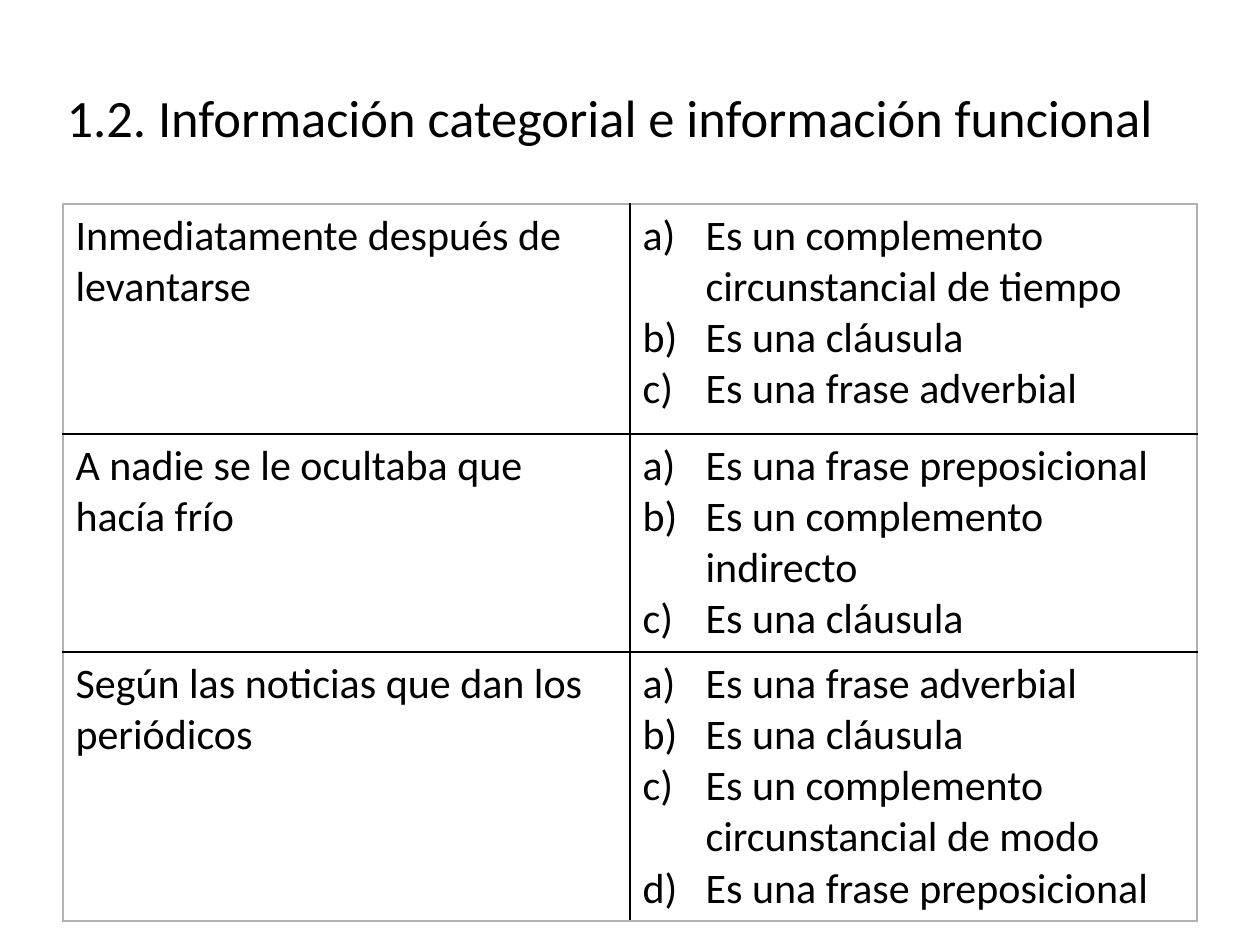
from pptx import Presentation
from pptx import util as u
from pptx.dml.color import RGBColor
from pptx.enum import text
from pptx.oxml.ns import qn
from lxml import etree

# Content: each phrase with its possible analyses
TITLE = "1.2. Información categorial e información funcional"
ROWS = [
    ("Inmediatamente después de levantarse",
     ["Es un complemento circunstancial de tiempo",
      "Es una cláusula",
      "Es una frase adverbial"]),
    ("A nadie se le ocultaba que hacía frío",
     ["Es una frase preposicional",
      "Es un complemento indirecto",
      "Es una cláusula"]),
    ("Según las noticias que dan los periódicos",
     ["Es una frase adverbial",
      "Es una cláusula",
      "Es un complemento circunstancial de modo",
      "Es una frase preposicional"]),
]
HEIGHTS = [230, 218, 269]
LEFT, TOP, COL = 63, 204, 567
INDENT = 63
FONT = "Calibri"
BLACK = RGBColor(0, 0, 0)
GREY = RGBColor(0xB2, 0xB2, 0xB2)


def px(n):
    return u.Emu(round(n * 914400 / 126))


def add_run(par, words, size):
    run = par.add_run()
    run.text = words
    run.font.name = FONT
    run.font.size = u.Pt(size)
    run.font.color.rgb = BLACK


def add_choice(par, words):
    props = par._p.get_or_add_pPr()
    props.set("marL", str(px(INDENT)))
    props.set("indent", str(-px(INDENT)))
    etree.SubElement(props, qn("a:buFont"), typeface="+mj-lt")
    etree.SubElement(props, qn("a:buAutoNum"), type="alphaLcParenR")
    add_run(par, words, 24)


def add_edge(cell, side, color):
    line = etree.SubElement(cell._tc.get_or_add_tcPr(), qn("a:ln" + side),
                            w=str(u.Pt(1)))
    fill = etree.SubElement(line, qn("a:solidFill"))
    etree.SubElement(fill, qn("a:srgbClr"), val=str(color))


def main():
    deck = Presentation()
    deck.slide_width, deck.slide_height = px(1260), px(945)
    slide = deck.slides.add_slide(deck.slide_layouts[5])

    # Title
    title = slide.shapes.title
    title.left, title.top = px(54), px(38)
    title.width, title.height = px(1171), px(157)
    frame = title.text_frame
    frame.word_wrap = True
    frame.vertical_anchor = text.MSO_ANCHOR.MIDDLE
    frame.paragraphs[0].alignment = text.PP_ALIGN.LEFT
    add_run(frame.paragraphs[0], TITLE, 30)

    # Table
    count = len(ROWS)
    table = slide.shapes.add_table(count, 2, px(LEFT), px(TOP), px(2 * COL),
                                   px(sum(HEIGHTS))).table
    table.first_row = table.horz_banding = False
    for col in table.columns:
        col.width = px(COL)
    for r, (phrase, choices) in enumerate(ROWS):
        table.rows[r].height = px(HEIGHTS[r])
        add_run(table.cell(r, 0).text_frame.paragraphs[0], phrase, 24)
        frame = table.cell(r, 1).text_frame
        for i, choice in enumerate(choices):
            par = frame.add_paragraph() if i else frame.paragraphs[0]
            add_choice(par, choice)

        # Grey outer edges, black inner edges
        for c in range(2):
            cell = table.cell(r, c)
            outer = {"L": c == 0, "R": c == 1,
                     "T": r == 0, "B": r == count - 1}
            for side, out in outer.items():
                add_edge(cell, side, GREY if out else BLACK)
            cell.fill.background()

    deck.save("out.pptx")


if __name__ == "__main__":
    main()
